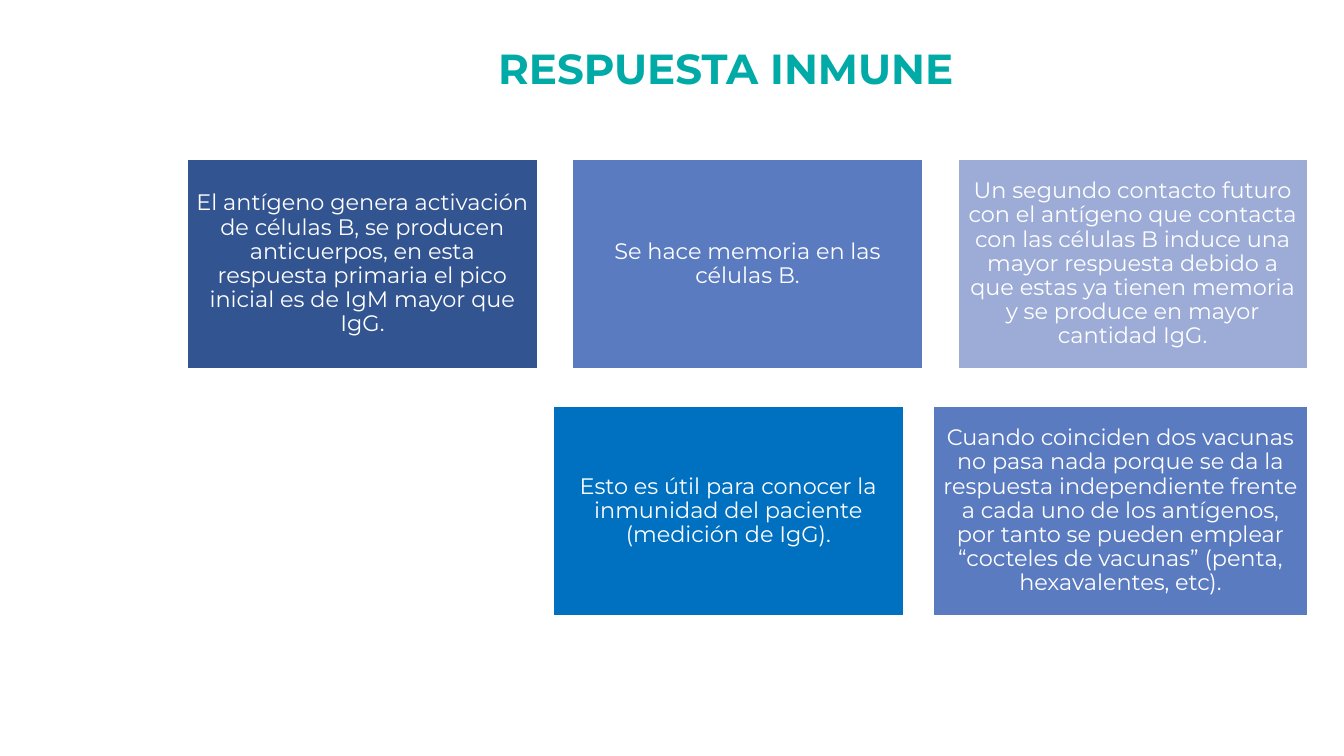
from pptx import Presentation
from pptx.dml.color import RGBColor
from pptx.enum.shapes import MSO_SHAPE
from pptx.enum.text import MSO_ANCHOR, PP_ALIGN
from pptx.util import Inches, Pt

RECTANGLE = MSO_SHAPE.RECTANGLE
MIDDLE, TOP = MSO_ANCHOR.MIDDLE, MSO_ANCHOR.TOP
CENTER = PP_ALIGN.CENTER

WHITE = RGBColor(0xFF, 0xFF, 0xFF)
TEAL = RGBColor(0x00, 0xAA, 0xA7)
NAVY = RGBColor(0x32, 0x54, 0x91)
MID_BLUE = RGBColor(0x5B, 0x7B, 0xC0)
PALE_BLUE = RGBColor(0x9D, 0xAC, 0xD6)
BRIGHT_BLUE = RGBColor(0x00, 0x70, 0xC0)

SLIDE_WIDTH, SLIDE_HEIGHT = 13.33, 7.5
GRID_LEFT, GRID_TOP = 1.86, 1.58
CARD_WIDTH, CARD_HEIGHT = 3.47, 2.08
COLUMN_GAP, ROW_GAP = 0.35, 0.37

# Column, row, width in cards, fill, text
CARDS = [
    (0, 0, 1, NAVY,
     "El antígeno genera activación de células B, se producen anticuerpos, en esta "
     "respuesta primaria el pico inicial es de IgM mayor que IgG."),
    (1, 0, 1, MID_BLUE, "Se hace memoria en las células B."),
    (2, 0, 1, PALE_BLUE,
     "Un segundo contacto futuro con el antígeno que contacta con las células B induce "
     "una mayor respuesta debido a que estas ya tienen memoria y se produce en mayor "
     "cantidad IgG."),
    (0.95, 1, 1, BRIGHT_BLUE,
     "Esto es útil para conocer la inmunidad del paciente (medición de IgG)."),
    (2, 1, 1.07, MID_BLUE,
     "Cuando coinciden dos vacunas no pasa nada porque se da la respuesta independiente "
     "frente a cada uno de los antígenos, por tanto se pueden emplear “cocteles de "
     "vacunas” (penta, hexavalentes, etc)."),
]


def set_attributes(target, values):
    for name, value in values.items():
        setattr(target, name, value)


class ImmuneSlide:
    font_name = "Montserrat"
    card_frame = {"word_wrap": True, "vertical_anchor": MIDDLE,
                  **{f"margin_{side}": Inches(0.07)
                     for side in ("left", "top", "right", "bottom")}}
    title_frame = {"word_wrap": True, "vertical_anchor": TOP}
    card_font = {"size": Pt(16), "bold": False}
    title_font = {"size": Pt(30), "bold": True}

    def __init__(self, presentation):
        blank_layout = presentation.slide_layouts[6]
        self.slide = presentation.slides.add_slide(blank_layout)

    def set_text(self, shape, text, frame_format, font_format, color, line_spacing):
        set_attributes(shape.text_frame, frame_format)
        paragraph = shape.text_frame.paragraphs[0]
        paragraph.text = text
        set_attributes(paragraph, {"alignment": CENTER, "line_spacing": line_spacing})
        set_attributes(paragraph.font, {"name": self.font_name, **font_format})
        paragraph.font.color.rgb = color

    def title(self, text, left, top, width, height):
        """Add the heading; the lengths are shares of the slide's size."""
        shape = self.slide.shapes.add_textbox(
            Inches(left * SLIDE_WIDTH), Inches(top * SLIDE_HEIGHT),
            Inches(width * SLIDE_WIDTH), Inches(height * SLIDE_HEIGHT))
        self.set_text(shape, text, self.title_frame, self.title_font, TEAL, 1.0)

    def card(self, column, row, span, fill, text):
        """Add a filled card whose right edge sits on its column's right edge."""
        width = span * CARD_WIDTH
        right = GRID_LEFT + CARD_WIDTH + column * (CARD_WIDTH + COLUMN_GAP)
        top = GRID_TOP + row * (CARD_HEIGHT + ROW_GAP)
        shape = self.slide.shapes.add_shape(
            RECTANGLE, Inches(right - width), Inches(top),
            Inches(width), Inches(CARD_HEIGHT))
        shape.shadow.inherit = False
        shape.fill.solid()
        shape.fill.fore_color.rgb = fill
        shape.line.color.rgb = WHITE
        shape.line.width = Pt(1)
        self.set_text(shape, text, self.card_frame, self.card_font, WHITE, 0.9)


def main():
    presentation = Presentation()
    presentation.slide_width = Inches(SLIDE_WIDTH)
    presentation.slide_height = Inches(SLIDE_HEIGHT)
    immune_slide = ImmuneSlide(presentation)
    for card in CARDS:
        immune_slide.card(*card)
    immune_slide.title("RESPUESTA INMUNE", 0.34, 0.05, 0.4, 0.08)
    presentation.save("out.pptx")


if __name__ == "__main__":
    main()
